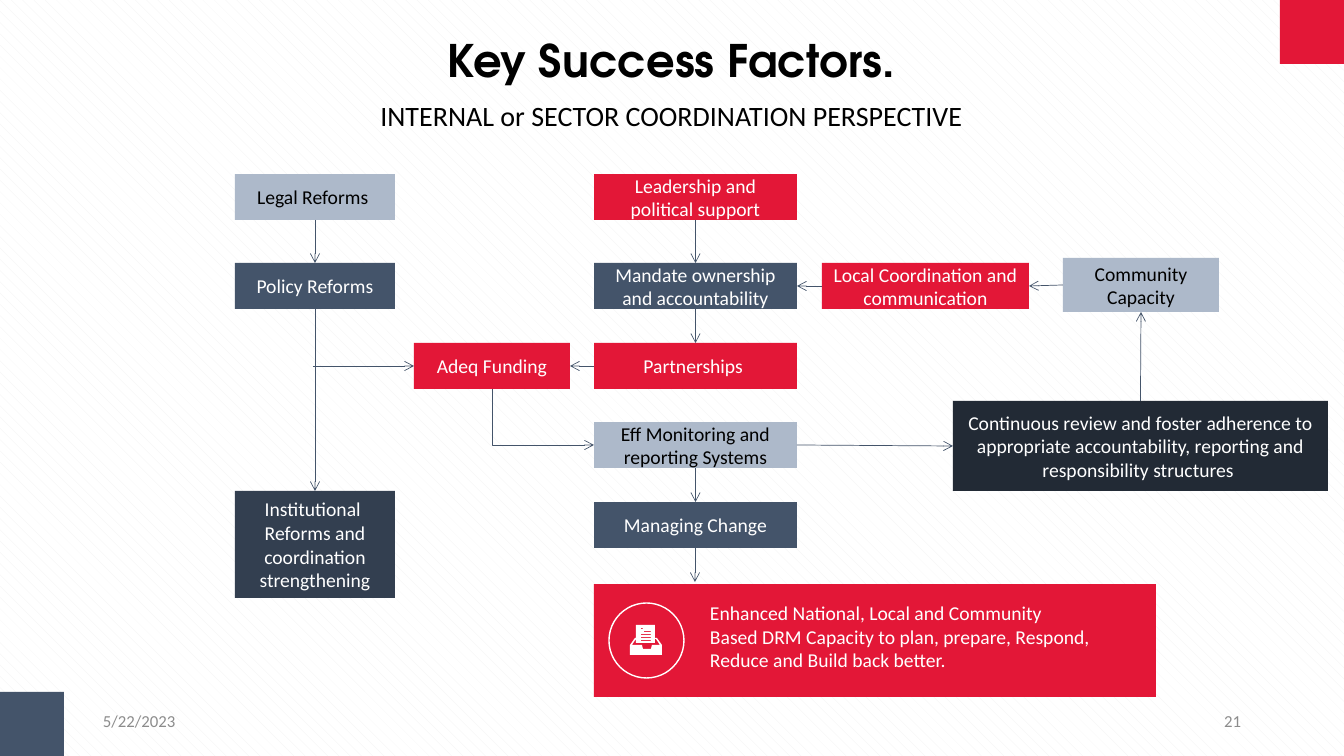
from lxml.etree import SubElement
from pptx import Presentation
from pptx.dml.color import RGBColor
from pptx.enum.dml import MSO_PATTERN
from pptx.enum.shapes import MSO_CONNECTOR, MSO_SHAPE
from pptx.enum.text import MSO_ANCHOR, PP_ALIGN
from pptx.oxml.ns import qn
from pptx.util import Pt

PX = 914400 / 100.8
WIDTH, HEIGHT = 1344, 756
FONT, TITLE_FONT = "Calibri", "TeX Gyre Adventor"

RED = RGBColor(0xE3, 0x17, 0x37)
SLATE = RGBColor(0x44, 0x54, 0x6A)
MIST = RGBColor(0xAD, 0xB9, 0xCA)
NAVY = RGBColor(0x33, 0x3F, 0x50)
INK = RGBColor(0x22, 0x2A, 0x35)
GREY = RGBColor(0x8C, 0x8C, 0x8C)
STRIPE = RGBColor(0xF2, 0xF2, 0xF2)
BLACK = RGBColor(0, 0, 0)
WHITE = RGBColor(0xFF, 0xFF, 0xFF)

TITLE = "Key Success Factors."
SUBTITLE = "INTERNAL or SECTOR COORDINATION PERSPECTIVE"
OUTCOME = ("Enhanced National, Local and Community Based DRM Capacity to plan, "
           "prepare, Respond, Reduce and Build back better.")
DATE, NUMBER = "5/22/2023", "21"

REFORMS, CENTRE = (235, 160), (594, 203)
ROWS = [174, 263, 343, 422, 502]
ROW_HEIGHT = 46

FACTORS = {
    "legal": ("Legal Reforms ", REFORMS, ROWS[0], ROW_HEIGHT, MIST),
    "policy": ("Policy Reforms", REFORMS, ROWS[1], ROW_HEIGHT, SLATE),
    "institutions": ("Institutional  Reforms and coordination strengthening",
                     REFORMS, 491, 107, NAVY),
    "leadership": ("Leadership and political support", CENTRE, ROWS[0], ROW_HEIGHT, RED),
    "mandate": ("Mandate ownership and accountability", CENTRE, ROWS[1], ROW_HEIGHT, SLATE),
    "partners": ("Partnerships ", CENTRE, ROWS[2], ROW_HEIGHT, RED),
    "monitoring": ("Eff Monitoring and reporting Systems", CENTRE, ROWS[3], ROW_HEIGHT, MIST),
    "change": ("Managing Change", CENTRE, ROWS[4], ROW_HEIGHT, SLATE),
    "funding": ("Adeq Funding", (414, 156), ROWS[2], ROW_HEIGHT, RED),
    "local": ("Local Coordination and communication", (822, 207), ROWS[1], ROW_HEIGHT, RED),
    "community": ("Community Capacity", (1063, 156), 258, 54, MIST),
    "review": ("Continuous review and foster adherence to appropriate accountability, "
               "reporting and responsibility structures ", (953, 375), 401, 90, INK),
}

TOP, LEFT, BOTTOM, RIGHT = range(4)
LINKS = [
    ("legal", BOTTOM, "policy", TOP),
    ("policy", BOTTOM, "institutions", TOP),
    ("leadership", BOTTOM, "mandate", TOP),
    ("mandate", BOTTOM, "partners", TOP),
    ("monitoring", BOTTOM, "change", TOP),
    ("local", LEFT, "mandate", RIGHT),
    ("community", LEFT, "local", RIGHT),
    ("review", TOP, "community", BOTTOM),
    ("partners", LEFT, "funding", RIGHT),
    ("monitoring", RIGHT, "review", LEFT),
]
FREE_ARROWS = [((313, 366), (414, 366)), ((695, 548), (695, 582))]
ELBOW_START, ELBOW_END = (492, 389), (594, 445)

TRAY = [(630, 645), (635, 638), (636, 638), (636, 625), (655, 625), (655, 638),
        (657, 638), (662, 645), (662, 655), (630, 655)]
TRAY_OPENING = [(652, 645), (651, 649), (643, 649), (642, 645), (632, 645), (636, 639),
                (636, 643), (655, 643), (655, 639), (656, 639), (660, 645)]
PAPER_LINES = [(641, 643, 628), (644, 651, 631), (641, 651, 634),
               (641, 651, 637), (641, 651, 640)]


def px(*lengths):
    return [round(length * PX) for length in lengths]


def write(shape, text, size, color, align=PP_ALIGN.CENTER, anchor=MSO_ANCHOR.MIDDLE,
          font=FONT, bold=False, flush=False):
    frame = shape.text_frame
    frame.text = text
    frame.word_wrap = True
    frame.vertical_anchor = anchor
    if flush:
        frame.margin_left = frame.margin_right = frame.margin_top = frame.margin_bottom = 0
    para = frame.paragraphs[0]
    para.alignment = align
    span = para.runs[0].font
    span.name, span.size, span.bold = font, Pt(size), bold
    span.color.rgb = color


def add_block(left, top, width, height, color):
    block = page.shapes.add_shape(MSO_SHAPE.RECTANGLE, *px(left, top, width, height))
    block.shadow.inherit = False
    block.fill.solid()
    block.fill.fore_color.rgb = color
    block.line.fill.background()
    return block


def add_label(left, top, width, height, *content, **style):
    write(page.shapes.add_textbox(*px(left, top, width, height)), *content, **style)


def add_arrow(start=(0, 0), end=(0, 0), kind=MSO_CONNECTOR.STRAIGHT):
    arrow = page.shapes.add_connector(kind, *px(*start, *end))
    arrow.line.color.rgb = SLATE
    arrow.line.width = Pt(0.5)
    SubElement(arrow.line._get_or_add_ln(), qn("a:tailEnd"), type="arrow")
    SubElement(arrow._element.spPr, qn("a:effectLst"))
    return arrow


def add_elbow(start, end):
    run, drop = end[0] - start[0], end[1] - start[1]
    left = (start[0] + end[0] - drop) / 2
    top = (start[1] + end[1] - run) / 2
    elbow = add_arrow((left, top), (left + drop, top + run), MSO_CONNECTOR.ELBOW)
    properties = elbow._element.spPr
    properties.find(qn("a:prstGeom")).set("prst", "bentConnector2")
    frame = properties.find(qn("a:xfrm"))
    frame.set("rot", "16200000")
    frame.set("flipH", "1")


def add_tray_icon():
    outlines = [TRAY, TRAY_OPENING]
    for left, right, y in PAPER_LINES:
        outlines.append([(left, y), (right, y), (right, y + 1), (left, y + 1)])
    builder = page.shapes.build_freeform(*TRAY[0], scale=PX)
    for outline in outlines:
        if outline is not TRAY:
            builder.move_to(*outline[0])
        builder.add_line_segments(outline[1:], close=True)
    icon = builder.convert_to_shape()
    icon.shadow.inherit = False
    icon.fill.solid()
    icon.fill.fore_color.rgb = WHITE
    icon.line.fill.background()


deck = Presentation()
deck.slide_width, deck.slide_height = px(WIDTH, HEIGHT)
page = deck.slides.add_slide(deck.slide_layouts[5])
backdrop = page.background.fill
backdrop.patterned()
backdrop.pattern = MSO_PATTERN.SHINGLE
backdrop.fore_color.rgb = STRIPE
backdrop.back_color.rgb = WHITE

title = page.shapes.title
title.left, title.top, title.width, title.height = px(161, 32, 1021, 55)
write(title, TITLE, 32, BLACK, font=TITLE_FONT, bold=True, flush=True)
add_label(161, 98, 1021, 34, SUBTITLE, 20, BLACK, anchor=MSO_ANCHOR.TOP, flush=True)

CORNER = 64
add_block(WIDTH - CORNER, 0, CORNER, CORNER, RED)
add_block(0, HEIGHT - CORNER, CORNER, CORNER, SLATE)

boxes = {}
for name, (text, (left, width), top, height, color) in FACTORS.items():
    boxes[name] = add_block(left, top, width, height, color)
    write(boxes[name], text, 14, BLACK if color == MIST else WHITE)

for source, source_side, target, target_side in LINKS:
    link = add_arrow()
    link.begin_connect(boxes[source], source_side)
    link.end_connect(boxes[target], target_side)
for start, end in FREE_ARROWS:
    add_arrow(start, end)
add_elbow(ELBOW_START, ELBOW_END)

add_block(594, 584, 562, 113, RED)
ring = page.shapes.add_shape(MSO_SHAPE.OVAL, *px(609, 603, 75, 75))
ring.shadow.inherit = False
ring.fill.background()
ring.line.color.rgb = WHITE
ring.line.width = Pt(1)
add_tray_icon()
add_label(710, 601, 383, 72, OUTCOME, 14, WHITE, align=PP_ALIGN.LEFT,
          anchor=MSO_ANCHOR.TOP, flush=True)

add_label(93, 701, 302, 40, DATE, 12, GREY, align=PP_ALIGN.LEFT)
add_label(949, 701, 302, 40, NUMBER, 12, GREY, align=PP_ALIGN.RIGHT)

deck.save("out.pptx")
